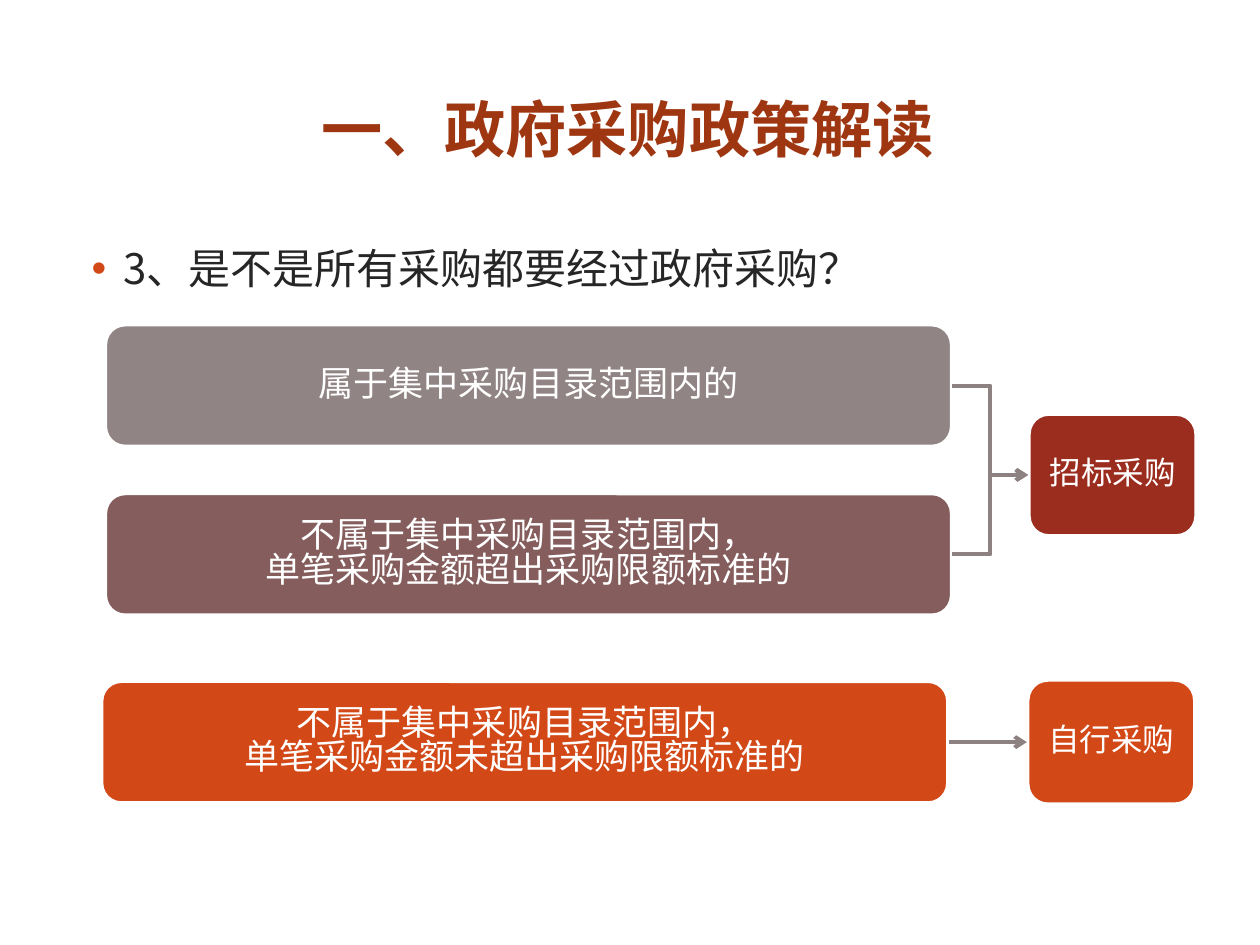
import pptx
import pptx.util
import pptx.dml.color
import pptx.enum.shapes
import pptx.enum.text
import pptx.oxml.ns
from lxml import etree

Inches, Pt = pptx.util.Inches, pptx.util.Pt
Align, Anchor = pptx.enum.text.PP_ALIGN, pptx.enum.text.MSO_ANCHOR
qn = pptx.oxml.ns.qn

FONT = "Noto Sans CJK SC"
TITLE = "一、政府采购政策解读"
QUESTION = "3、是不是所有采购都要经过政府采购？"
WIDE, SMALL, HIGH = 6.73, 1.34, 0.98

# name: (left, top, width, height, fill, text size, lines)
BOXES = {
    "listed": (0.83, 2.57, WIDE, HIGH, "918485", 20, ["属于集中采购目录范围内的"]),
    "above": (0.83, 3.91, WIDE, HIGH, "855D5D", 20,
              ["不属于集中采购目录范围内，", "单笔采购金额超出采购限额标准的"]),
    "below": (0.8, 5.4, WIDE, HIGH, "D34817", 20,
              ["不属于集中采购目录范围内，", "单笔采购金额未超出采购限额标准的"]),
    "tender": (8.16, 3.28, SMALL, HIGH, "9B2D1F", 18, ["招标采购"]),
    "self": (8.15, 5.39, SMALL, 1, "D34817", 18, ["自行采购"]),
}
LINKS = [("listed", "tender"), ("above", "tender"), ("below", "self")]


def color(code):
    return pptx.dml.color.RGBColor.from_string(code)


def write(shape, lines, ink, anchor, space, align, **style):
    frame = shape.text_frame
    frame.word_wrap = True
    frame.vertical_anchor = anchor
    for i, line in enumerate(lines):
        para = frame.paragraphs[0] if i == 0 else frame.add_paragraph()
        para.alignment, para.line_spacing = align, space
        run = para.add_run()
        run.text = line
        run.font.color.rgb = color(ink)
        for key, value in {"name": FONT, **style}.items():
            setattr(run.font, key, value)
        etree.SubElement(run.font._element, qn("a:ea"), typeface=FONT)
    return frame


def bullet(para, ink):
    props = para._p.get_or_add_pPr()
    props.set("marL", str(Inches(0.38)))
    props.set("indent", str(Inches(-0.25)))
    tint = etree.SubElement(props, qn("a:buClr"))
    etree.SubElement(tint, qn("a:srgbClr"), val=ink)
    etree.SubElement(props, qn("a:buFont"), typeface="Arial")
    etree.SubElement(props, qn("a:buChar"), char="•")


def box(slide, left, top, width, height, fill, size, lines):
    shape = slide.shapes.add_shape(
        pptx.enum.shapes.MSO_SHAPE.ROUNDED_RECTANGLE,
        *map(Inches, (left, top, width, height)))
    shape.shadow.inherit = False
    shape.fill.solid()
    shape.fill.fore_color.rgb = color(fill)
    shape.line.color.rgb = color("FFFFFF")
    shape.line.width = Pt(3)
    write(shape, lines, "FFFFFF", Anchor.MIDDLE, 0.83, Align.CENTER, size=Pt(size))
    return shape


def link(slide, start, end):
    """Join the right side of start to the left side of end."""
    line = slide.shapes.add_connector(
        pptx.enum.shapes.MSO_CONNECTOR.ELBOW,
        start.left + start.width, start.top + start.height // 2,
        end.left, end.top + end.height // 2)
    line.begin_connect(start, 3)
    line.end_connect(end, 1)
    line.line.color.rgb = color("8E8182")
    line.line.width = Pt(2.25)
    etree.SubElement(line.line._get_or_add_ln(), qn("a:tailEnd"), type="arrow")
    etree.SubElement(line._element.spPr, qn("a:effectLst"))


def main():
    deck = pptx.Presentation()
    deck.slide_width, deck.slide_height = Inches(10), Inches(7.5)
    slide = deck.slides.add_slide(deck.slide_layouts[6])

    title = slide.shapes.add_textbox(*map(Inches, (0.47, 0.45, 9.03, 1.14)))
    write(title, [TITLE], "9E3611", Anchor.MIDDLE, 1.0, Align.CENTER,
          size=Pt(35), bold=True)
    body = slide.shapes.add_textbox(*map(Inches, (0.5, 1.92, 9, 4.78)))
    frame = write(body, [QUESTION], "262626", Anchor.TOP, 0.9, Align.LEFT, size=Pt(24))
    bullet(frame.paragraphs[0], "D34817")

    shapes = {name: box(slide, *data) for name, data in BOXES.items()}
    for start, end in LINKS:
        link(slide, shapes[start], shapes[end])
    deck.save("out.pptx")


if __name__ == "__main__":
    main()
